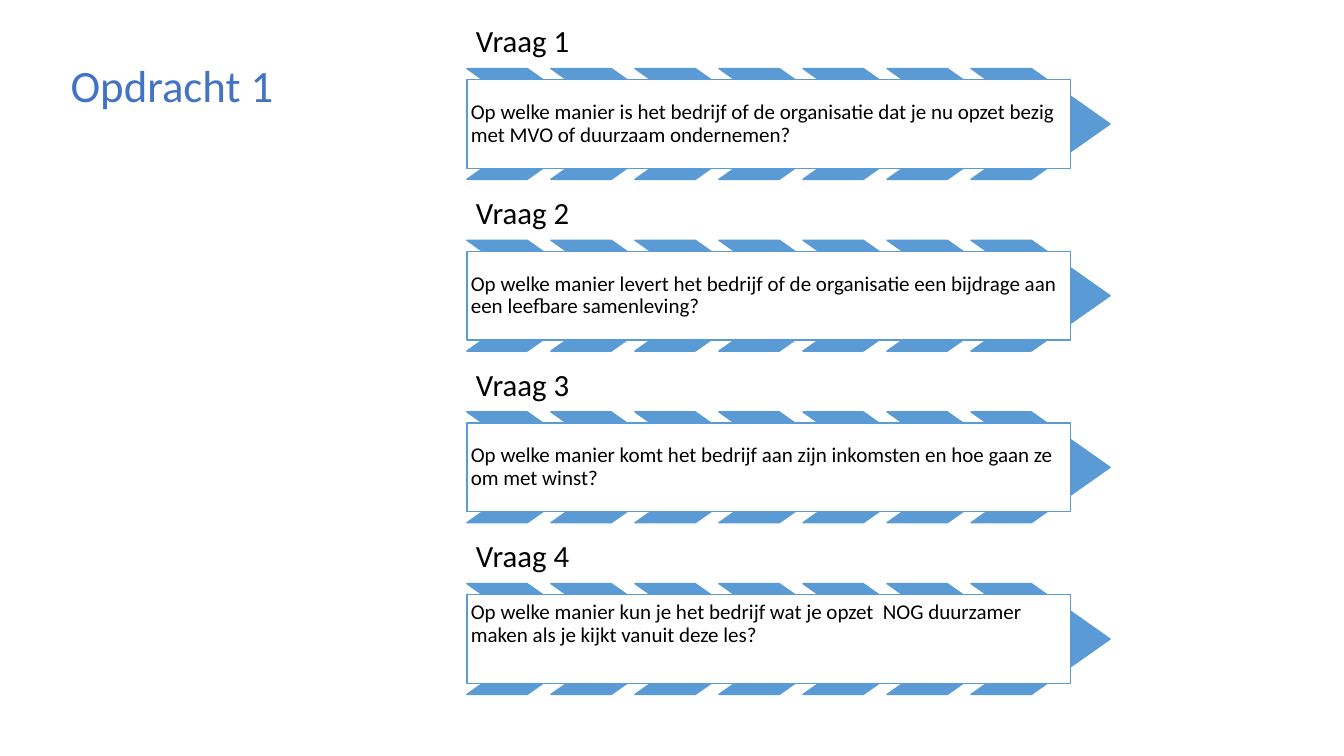
from pptx import Presentation, util as u
from pptx.dml.color import RGBColor
from pptx.enum import shapes, text

COLORS = {"title": "4472C4", "accent": "5B9BD5", "text": "000000", "paper": "FFFFFF"}
QUESTIONS = [
    "Op welke manier is het bedrijf of de organisatie dat je nu opzet bezig met MVO of duurzaam ondernemen?",
    "Op welke manier levert het bedrijf of de organisatie een bijdrage aan een leefbare samenleving?",
    "Op welke manier komt het bedrijf aan zijn inkomsten en hoe gaan ze om met winst?",
    "Op welke manier kun je het bedrijf wat je opzet  NOG duurzamer maken als je kijkt vanuit deze les?",
]
ROW_HEIGHT, HEADING_HEIGHT = 1.64, 0.54
CHEVRON_COUNT, CHEVRON_WIDTH = 7, 1.38


def set_attributes(target, values):
    for name, value in values.items():
        setattr(target, name, value)


def write_text(shape, wording, size, color, anchor, inset=0.1, extra_bottom=0, spacing=1.0):
    frame = shape.text_frame
    frame.text = wording
    margin = u.Inches(inset)
    set_attributes(frame, {
        "word_wrap": True, "auto_size": text.MSO_AUTO_SIZE.NONE, "vertical_anchor": anchor,
        "margin_left": margin, "margin_right": margin, "margin_top": u.Inches(0.05) if inset == 0.1 else margin,
        "margin_bottom": u.Inches(inset + extra_bottom),
    })
    paragraph = frame.paragraphs[0]
    set_attributes(paragraph, {"alignment": text.PP_ALIGN.LEFT, "line_spacing": spacing})
    set_attributes(paragraph.font, {"size": u.Pt(size), "name": "Calibri"})
    paragraph.font.color.rgb = RGBColor.from_string(COLORS[color])


def add_outlined_shape(slide, kind, left, top, width, height, fill):
    shape = slide.shapes.add_shape(kind, *map(u.Inches, (left, top, width, height)))
    shape.shadow.inherit = False
    shape.fill.solid()
    shape.fill.fore_color.rgb = RGBColor.from_string(COLORS[fill])
    shape.line.color.rgb = RGBColor.from_string(COLORS["accent"])
    shape.line.width = u.Pt(1)
    return shape


def add_title(slide, left, top, width, height):
    title = slide.shapes.title
    set_attributes(title, dict(zip(("left", "top", "width", "height"),
                                   map(u.Inches, (left, top, width, height)))))
    write_text(title, "Opdracht 1", 32, "title", text.MSO_ANCHOR.TOP)


def add_question(slide, heading, question, left, top, width, extra_bottom):
    label = slide.shapes.add_textbox(*map(u.Inches, (left, top, width - 0.46, HEADING_HEIGHT)))
    write_text(label, heading, 22, "text", text.MSO_ANCHOR.BOTTOM, 0.09, spacing=0.9)
    band_top, band_height = top + HEADING_HEIGHT, ROW_HEIGHT - HEADING_HEIGHT
    step = (width - CHEVRON_WIDTH) / (CHEVRON_COUNT - 1)
    for index in range(CHEVRON_COUNT):
        chevron = add_outlined_shape(slide, shapes.MSO_SHAPE.CHEVRON, left + index * step,
                                     band_top, CHEVRON_WIDTH, band_height, "accent")
        chevron.adjustments[0] = 0.71
    box = add_outlined_shape(slide, shapes.MSO_SHAPE.RECTANGLE, left, band_top + 0.1 * band_height,
                             width - 0.39, 0.8 * band_height, "paper")
    write_text(box, question, 15, "text", text.MSO_ANCHOR.MIDDLE, 0.04, extra_bottom, 0.9)


def add_questions(slide, left, top, width, height):
    pitch = (height - ROW_HEIGHT) / (len(QUESTIONS) - 1)
    for index, question in enumerate(QUESTIONS):
        extra_bottom = 0.29 if index == len(QUESTIONS) - 1 else 0
        add_question(slide, f"Vraag {index + 1}", question, left, top + index * pitch, width, extra_bottom)


def main():
    presentation = Presentation()
    presentation.slide_width, presentation.slide_height = u.Inches(13.33), u.Inches(7.5)
    slide = presentation.slides.add_slide(presentation.slide_layouts[5])
    add_questions(slide, 4.63, 0.14, 6.38, 6.75)
    add_title(slide, 0.6, 0.52, 6.67, 0.64)
    presentation.save("out.pptx")


if __name__ == "__main__":
    main()
